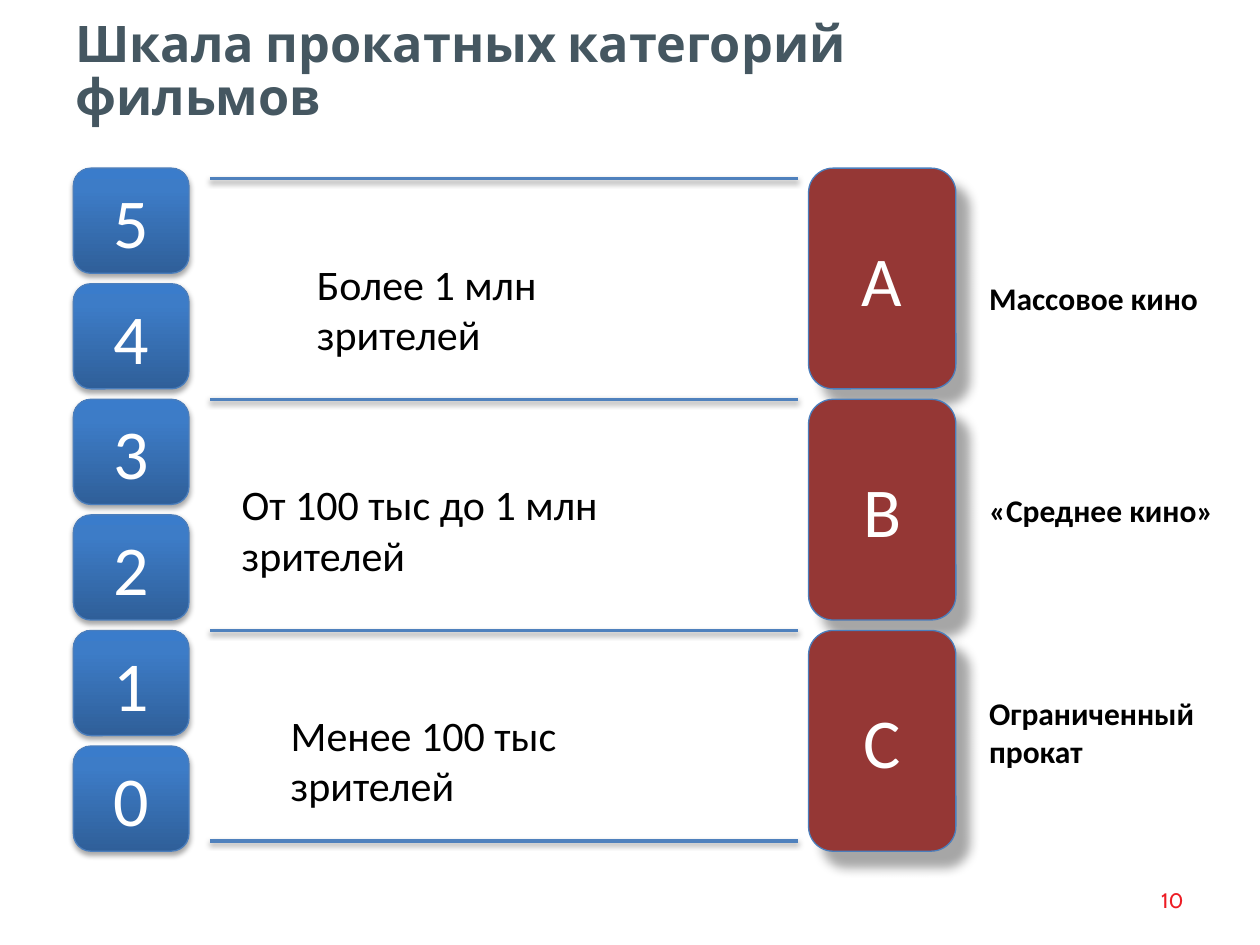
from lxml.etree import SubElement
from pptx import Presentation
from pptx.dml.color import RGBColor
from pptx.enum.shapes import MSO_CONNECTOR, MSO_SHAPE
from pptx.enum.text import MSO_ANCHOR as Anchor, PP_ALIGN as Align
from pptx.oxml.ns import qn
from pptx.util import Cm, Pt

# Content
TITLE = "Шкала прокатных категорий фильмов"
PAGE_NUMBER = "10"
SCORES = ["5", "4", "3", "2", "1", "0"]
# letter, audience, (left, top, width), label, (top, width), label wraps
CATEGORIES = [
    ("A", "Более 1 млн зрителей", (5.89, 5.08, 8.51),
     "Массовое кино", (5.51, 4.78), False),
    ("B", "От 100 тыс до 1 млн зрителей", (4.37, 9.53, 11.28),
     "«Среднее кино»", (9.78, 5.11), False),
    ("C", "Менее 100 тыс зрителей", (5.36, 14.17, 9.45),
     "Ограниченный прокат", (13.87, 5.71), True),
]

# Grid in centimetres: two scores stand beside each category
TOP, GAP = 3.39, 0.21
SCORE_LEFT, SCORE_WIDTH, SCORE_HEIGHT = 1.48, 2.33, 2.12
CATEGORY_LEFT, CATEGORY_WIDTH = 16.3, 2.97
SCORE_STEP = SCORE_HEIGHT + GAP
CATEGORY_STEP = 2 * SCORE_STEP
CATEGORY_HEIGHT = CATEGORY_STEP - GAP
LINE_LEFT, LINE_RIGHT = 4.23, 16.09
LABEL_LEFT = 19.69

GRADIENT = [(0, "2F5F99"), (80, "3D7CC7"), (100, "3A7CCB")]
# opacity %, blur pt, distance pt, direction in degrees
SCORE_SHADOW = (35, 3.1, 1.8, 90)
CATEGORY_SHADOW = (35, 6.2, 11.8, 49)
LINE_SHADOW = (38, 3.1, 1.6, 90)


def color(value):
    return RGBColor.from_string(value)


def set_shadow(shape, opacity, blur, distance, direction):
    effects = SubElement(shape._element.spPr, qn("a:effectLst"))
    outer = SubElement(effects, qn("a:outerShdw"), blurRad=str(Pt(blur)),
                       dist=str(Pt(distance)), dir=str(direction * 60000),
                       rotWithShape="0")
    black = SubElement(outer, qn("a:srgbClr"), val="000000")
    SubElement(black, qn("a:alpha"), val=str(opacity * 1000))


def set_gradient(shape):
    shape.fill.gradient()
    shape.fill.gradient_angle = 90
    stops = shape._element.spPr.find(qn("a:gradFill")).find(qn("a:gsLst"))
    for stop in list(stops):
        stops.remove(stop)
    for position, value in GRADIENT:
        stop = SubElement(stops, qn("a:gs"), pos=str(position * 1000))
        SubElement(stop, qn("a:srgbClr"), val=value)


def write(shape, text, size, value="000000", font="Calibri", bold=False,
          align=Align.LEFT, anchor=Anchor.TOP, wrap=True):
    frame = shape.text_frame
    frame.word_wrap = wrap
    frame.vertical_anchor = anchor
    para = frame.paragraphs[0]
    para.text = text
    para.alignment = align
    para.font.size = Pt(size)
    para.font.name = font
    para.font.bold = bold
    para.font.color.rgb = color(value)
    return para


def add_text(page, left, top, width, height, text, size, **style):
    box = page.shapes.add_textbox(Cm(left), Cm(top), Cm(width), Cm(height))
    return write(box, text, size, **style)


def add_tile(page, left, top, width, height, text, shadow, fill=None):
    tile = page.shapes.add_shape(MSO_SHAPE.ROUNDED_RECTANGLE, Cm(left), Cm(top),
                                 Cm(width), Cm(height))
    if fill:
        tile.fill.solid()
        tile.fill.fore_color.rgb = color(fill)
    else:
        set_gradient(tile)
    tile.line.color.rgb = color("4B7EBC")
    tile.line.width = Pt(0.75)
    set_shadow(tile, *shadow)
    write(tile, text, 40, "FFFFFF", align=Align.CENTER, anchor=Anchor.MIDDLE)


def add_divider(page, top):
    line = page.shapes.add_connector(MSO_CONNECTOR.STRAIGHT, Cm(LINE_LEFT), Cm(top),
                                     Cm(LINE_RIGHT), Cm(top))
    line.line.color.rgb = color("4F81BD")
    line.line.width = Pt(2)
    set_shadow(line, *LINE_SHADOW)


def main():
    deck = Presentation()
    deck.slide_width, deck.slide_height = Cm(25.4), Cm(19.05)
    page = deck.slides.add_slide(deck.slide_layouts[6])

    # Title and page number
    title = add_text(page, 1.27, 0.76, 19.38, 1.42, TITLE, 28.8, value="455761",
                     font="Cabin", bold=True, anchor=Anchor.MIDDLE)
    title.line_spacing = 0.88
    add_text(page, 22.81, 17.63, 1.3, 1.02, PAGE_NUMBER, 12, value="ED1C24",
             font="Cabin", align=Align.RIGHT, anchor=Anchor.MIDDLE)

    # Score column
    for row, score in enumerate(SCORES):
        add_tile(page, SCORE_LEFT, TOP + row * SCORE_STEP, SCORE_WIDTH,
                 SCORE_HEIGHT, score, SCORE_SHADOW)

    # Categories with audience size and label
    for row, category in enumerate(CATEGORIES):
        letter, audience, (left, top, width), label, (label_top, label_width), wrap = category
        para = add_text(page, left, top, width, 1.27, audience, 24)
        para._p.get_or_add_pPr().set("marL", str(Cm(0.25)))
        add_tile(page, CATEGORY_LEFT, TOP + row * CATEGORY_STEP, CATEGORY_WIDTH,
                 CATEGORY_HEIGHT, letter, CATEGORY_SHADOW, "953735")
        add_text(page, LABEL_LEFT, label_top, label_width, 1.02, label, 18,
                 bold=True, wrap=wrap)

    # Dividers: the outer two sit one gap inside the column
    count = len(CATEGORIES)
    bottom = TOP + count * CATEGORY_STEP - GAP
    inner = [TOP + row * CATEGORY_STEP for row in range(1, count)]
    for top in [TOP + GAP, *inner, bottom - GAP]:
        add_divider(page, top)

    deck.save("out.pptx")


if __name__ == "__main__":
    main()
